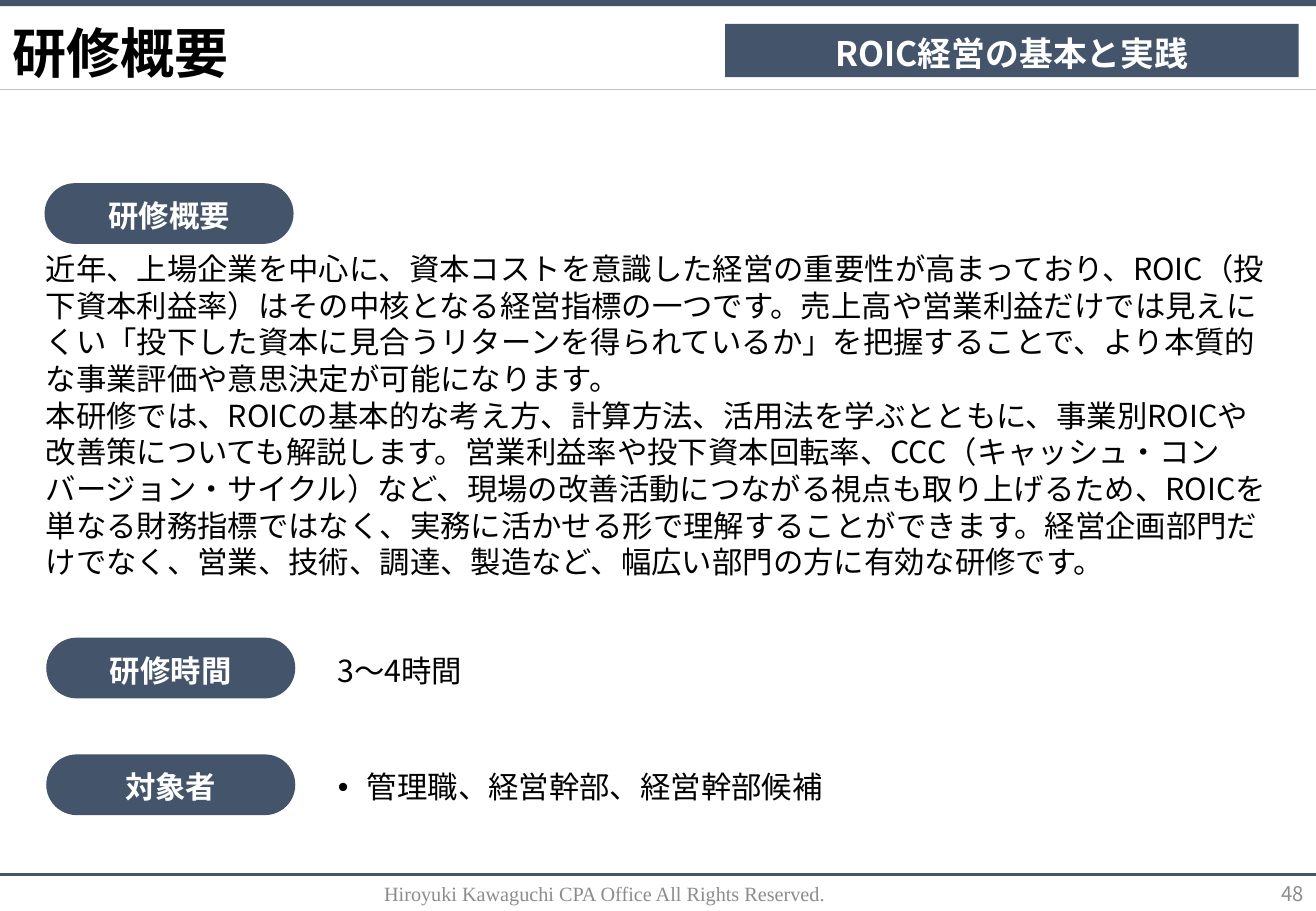
from lxml import etree
from pptx import Presentation, util as u
from pptx.dml.color import RGBColor
from pptx.enum import lang, shapes, text
from pptx.oxml.ns import qn

Pt = u.Pt
COLOURS = {"navy": "44546A", "ink": "000000", "white": "FFFFFF",
           "grey": "8C8C8C", "rule": "BFBFBF"}
GOTHIC, SERIF = "Noto Sans CJK JP", "Times New Roman"
LEFT, CENTRE, RIGHT = text.PP_ALIGN.LEFT, text.PP_ALIGN.CENTER, text.PP_ALIGN.RIGHT
TOP, MIDDLE = text.MSO_ANCHOR.TOP, text.MSO_ANCHOR.MIDDLE
LABEL = {"bold": True, "colour": "white", "align": CENTRE}

OVERVIEW = [
    "近年、上場企業を中心に、資本コストを意識した経営の重要性が高まっており、ROIC（投下資本利益率）は"
    "その中核となる経営指標の一つです。売上高や営業利益だけでは見えにくい「投下した資本に見合うリターンを"
    "得られているか」を把握することで、より本質的な事業評価や意思決定が可能になります。",
    "本研修では、ROICの基本的な考え方、計算方法、活用法を学ぶとともに、事業別ROICや改善策についても"
    "解説します。営業利益率や投下資本回転率、CCC（キャッシュ・コンバージョン・サイクル）など、現場の"
    "改善活動につながる視点も取り上げるため、ROICを単なる財務指標ではなく、実務に活かせる形で理解する"
    "ことができます。経営企画部門だけでなく、営業、技術、調達、製造など、幅広い部門の方に有効な研修です。",
]


class CourseSlide:
    def __init__(self, deck):
        self.slide = deck.slides.add_slide(deck.slide_layouts[1])

    @staticmethod
    def colour(name):
        return RGBColor.from_string(COLOURS[name])

    def fill_text(self, holder, paragraphs, size=18, bold=False, colour="ink", font=GOTHIC,
                  align=LEFT, anchor=MIDDLE, wrap=True, leading=1.33):
        """Fill a shape with paragraphs; leading is a multiple of the text size."""
        frame = holder.text_frame
        frame_format = {"word_wrap": wrap, "auto_size": text.MSO_AUTO_SIZE.NONE,
                        "vertical_anchor": anchor,
                        "margin_left": Pt(7.2), "margin_right": Pt(7.2),
                        "margin_top": Pt(3.6), "margin_bottom": Pt(3.6)}
        for key, value in frame_format.items():
            setattr(frame, key, value)
        for index, words in enumerate(paragraphs):
            paragraph = frame.add_paragraph() if index else frame.paragraphs[0]
            for key, value in {"alignment": align, "space_before": Pt(0),
                               "line_spacing": Pt(round(size * leading, 1))}.items():
                setattr(paragraph, key, value)
            run = paragraph.add_run()
            run.text = words
            for key, value in {"size": Pt(size), "bold": bold, "name": font,
                               "language_id": lang.MSO_LANGUAGE_ID.JAPANESE}.items():
                setattr(run.font, key, value)
            run.font.color.rgb = self.colour(colour)
            latin = run._r.get_or_add_rPr().find(qn("a:latin"))
            latin.addnext(etree.Element(qn("a:ea"), typeface=font))

    def place(self, holder, box):
        for key, value in zip(("left", "top", "width", "height"), box):
            setattr(holder, key, Pt(value))

    def title(self, words, box):
        holder = self.slide.shapes.title
        self.place(holder, box)
        self.fill_text(holder, [words], size=32, bold=True, wrap=False)

    def bullets(self, items, box, indent):
        holder = self.slide.placeholders[1]
        self.place(holder, box)
        self.fill_text(holder, items)
        for paragraph in holder.text_frame.paragraphs:
            properties = paragraph._p.get_or_add_pPr()
            properties.set("marL", str(Pt(indent)))
            properties.set("indent", str(-Pt(indent)))

    def textbox(self, paragraphs, box, **style):
        holder = self.slide.shapes.add_textbox(*map(Pt, box))
        self.fill_text(holder, paragraphs, **style)

    def block(self, box, words=None, rounded=False):
        kind = shapes.MSO_SHAPE.ROUNDED_RECTANGLE if rounded else shapes.MSO_SHAPE.RECTANGLE
        block = self.slide.shapes.add_shape(kind, *map(Pt, box))
        if rounded:
            block.adjustments[0] = 0.5
        block.shadow.inherit = False
        block.fill.solid()
        block.fill.fore_color.rgb = self.colour("navy")
        block.line.fill.background()
        if words:
            self.fill_text(block, [words], size=18 if rounded else 20, **LABEL)

    def rule(self, y, colour, width):
        """Draw a horizontal line across the whole slide."""
        line = self.slide.shapes.add_connector(
            shapes.MSO_CONNECTOR.STRAIGHT, 0, Pt(y), Pt(780), Pt(y))
        line.line.color.rgb = self.colour(colour)
        line.line.width = Pt(width)
        etree.SubElement(line._element.spPr, qn("a:effectLst"))


def main():
    deck = Presentation()
    deck.slide_width, deck.slide_height = Pt(780), Pt(540)
    page = CourseSlide(deck)

    page.block((0, 0, 780, 3.6))
    page.rule(52.8, "rule", 0.5)
    page.rule(518.4, "navy", 1.5)
    page.title("研修概要", (0, 5.8, 144, 46))
    page.block((429.8, 14.2, 340, 31.6), "ROIC経営の基本と実践")

    for heading, left, top in (("研修概要", 26.4, 108.6), ("研修時間", 27.4, 378),
                               ("対象者", 27.4, 447.2)):
        page.block((left, top, 147.6, 36), heading, rounded=True)

    page.textbox(OVERVIEW, (20, 144.7, 740, 204), anchor=TOP, leading=1.205)
    page.textbox(["3～4時間"], (193, 381.6, 158.4, 29))
    page.bullets(["管理職、経営幹部、経営幹部候補"], (193, 450.7, 407.5, 29), indent=17.3)

    footer = {"size": 12, "colour": "grey"}
    page.textbox(["Hiroyuki Kawaguchi CPA Office All Rights Reserved."],
                 (177, 514, 363, 29), font=SERIF, align=CENTRE, **footer)
    page.textbox(["48"], (612, 514, 168, 29), align=RIGHT, **footer)

    deck.save("out.pptx")


if __name__ == "__main__":
    main()
